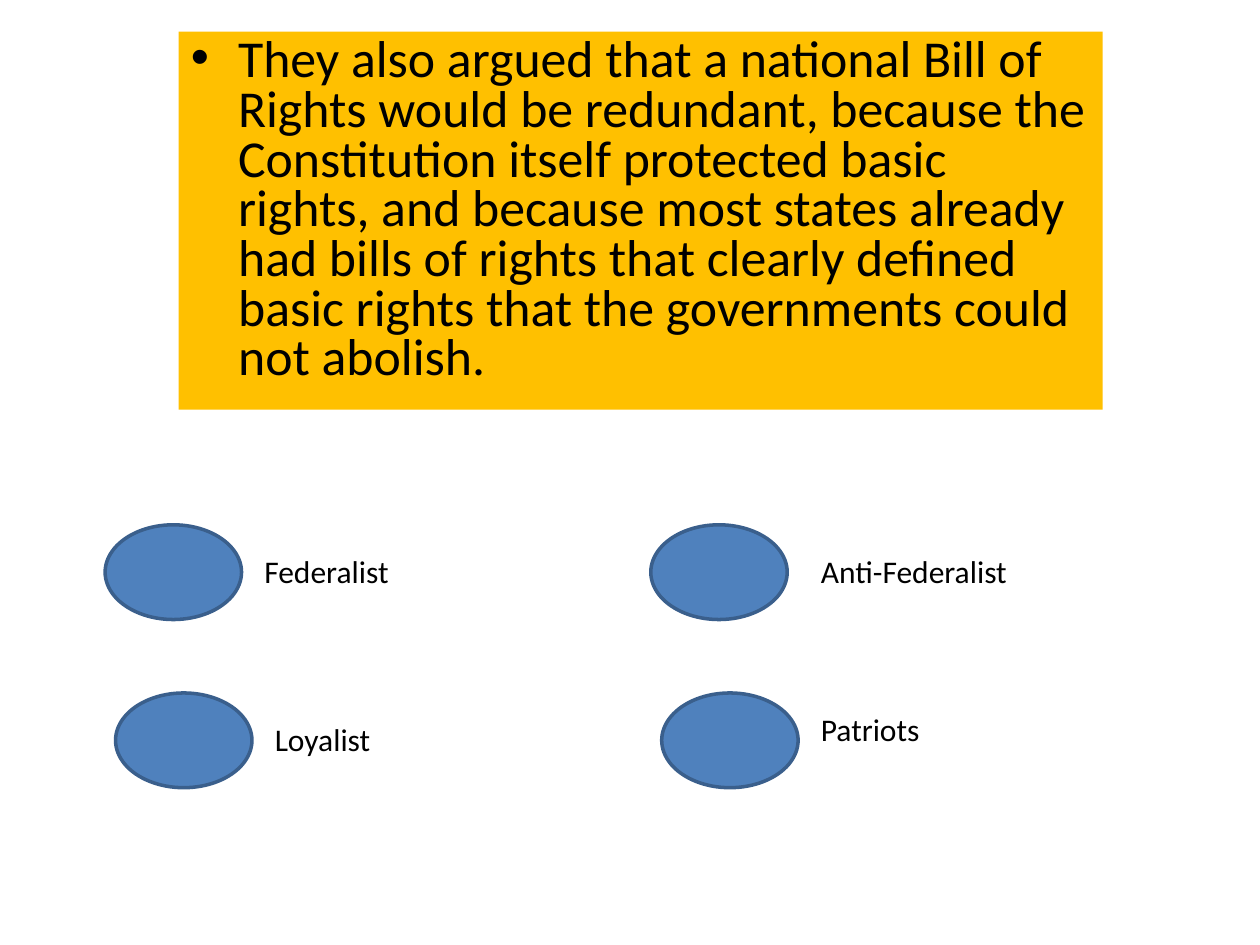
from lxml import etree
from pptx import Presentation
from pptx import util as u
from pptx.dml.color import RGBColor
from pptx.enum import shapes, text
from pptx.oxml.ns import qn

GOLD = RGBColor(0xFF, 0xC0, 0x00)
BLUE = RGBColor(0x4F, 0x81, 0xBD)
EDGE = RGBColor(0x3A, 0x5F, 0x8C)
BLACK = RGBColor(0, 0, 0)

CLAIM = (
    "They also argued that a national Bill of Rights would be redundant, "
    "because the Constitution itself protected basic rights, and because "
    "most states already had bills of rights that clearly defined basic "
    "rights that the governments could not abolish."
)
ANSWERS = [
    ("Federalist", 2.12, 10.58, 5.08, 11.01, 6.15),
    ("Anti-Federalist", 13.12, 10.58, 16.3, 11.01, 5.5),
    ("Loyalist", 2.33, 13.97, 5.29, 14.39, 4.23),
    ("Patriots", 13.34, 13.97, 16.3, 14.18, 4.87),
]


class Quiz:
    font = "Calibri"

    def __init__(self, slide):
        self.slide = slide

    def shape(self, kind, box, fill):
        item = self.slide.shapes.add_shape(kind, *map(u.Cm, box))
        item.shadow.inherit = False
        item.fill.solid()
        item.fill.fore_color.rgb = fill
        item.line.fill.background()
        return item

    def letter(self, frame, words, size):
        frame.word_wrap = True
        para = frame.paragraphs[0]
        para.alignment = text.PP_ALIGN.LEFT
        run = para.add_run()
        run.text = words
        run.font.name = self.font
        run.font.size = u.Pt(size)
        run.font.color.rgb = BLACK
        return para

    def panel(self, words, box):
        item = self.shape(shapes.MSO_SHAPE.RECTANGLE, box, GOLD)
        item.text_frame.vertical_anchor = text.MSO_ANCHOR.TOP
        para = self.letter(item.text_frame, words, 29.6)
        para.line_spacing = 0.8
        props = para._p.get_or_add_pPr()
        props.set("marL", str(u.Cm(0.95)))
        props.set("indent", str(-u.Cm(0.95)))
        before = etree.SubElement(props, qn("a:spcBef"))
        etree.SubElement(before, qn("a:spcPct"), val="20000")
        etree.SubElement(props, qn("a:buFont"), typeface="Arial")
        etree.SubElement(props, qn("a:buChar"), char="•")

    def oval(self, left, top):
        item = self.shape(shapes.MSO_SHAPE.OVAL, (left, top, 2.75, 1.91), BLUE)
        item.line.color.rgb = EDGE
        item.line.width = u.Pt(2)

    def label(self, words, left, top, width):
        box = map(u.Cm, (left, top, width, 1.03))
        frame = self.slide.shapes.add_textbox(*box).text_frame
        self.letter(frame, words, 18)
        frame.auto_size = text.MSO_AUTO_SIZE.SHAPE_TO_FIT_TEXT


def main():
    deck = Presentation()
    deck.slide_width, deck.slide_height = u.Cm(25.4), u.Cm(19.05)
    quiz = Quiz(deck.slides.add_slide(deck.slide_layouts[6]))
    quiz.panel(CLAIM, (3.6, 0.64, 18.63, 7.62))
    for words, left, top, *place in ANSWERS:
        quiz.oval(left, top)
        quiz.label(words, *place)
    deck.save("out.pptx")


if __name__ == "__main__":
    main()
